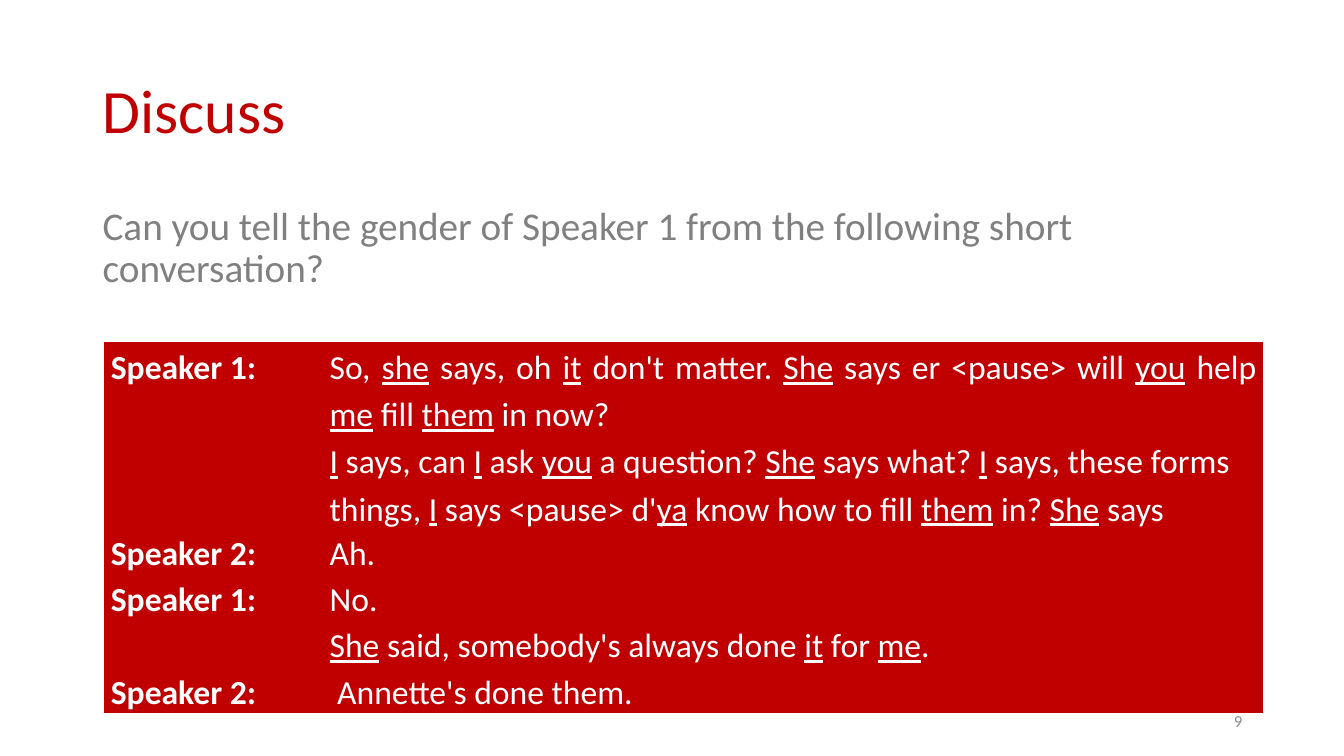
from dataclasses import dataclass

from pptx import Presentation
from pptx.dml.color import RGBColor
from pptx.enum.text import MSO_ANCHOR, PP_ALIGN
from pptx.oxml.ns import qn
from pptx.slide import Slide
from pptx.text.text import _Paragraph as Paragraph
from pptx.util import Inches, Pt

LEFT, RIGHT, JUSTIFY = PP_ALIGN.LEFT, PP_ALIGN.RIGHT, PP_ALIGN.JUSTIFY
TOP, MIDDLE = MSO_ANCHOR.TOP, MSO_ANCHOR.MIDDLE
RED, WHITE, GRAY, LIGHT_GRAY = "C00000", "FFFFFF", "808080", "8C8C8C"
FONT_NAME = "Calibri"
PLAIN_TABLE_STYLE = "{2D5ABB26-0587-4C30-8999-92F81FD0307C}"
UNDERLINE_MARK = "_"


@dataclass(frozen=True)
class Label:
    text: str
    left: float
    top: float
    width: float
    height: float
    size: int
    color: str
    anchor: MSO_ANCHOR = TOP
    alignment: PP_ALIGN = LEFT
    line_spacing: float = 0.9


@dataclass(frozen=True)
class Line:
    text: str
    alignment: PP_ALIGN = JUSTIFY


@dataclass(frozen=True)
class Turn:
    speaker: str
    lines: tuple[Line, ...]
    height: float = 0.32


LABELS = (
    Label("Discuss", 0.92, 0.4, 11.5, 1.45, 44, RED, anchor=MIDDLE),
    Label(
        "Can you tell the gender of Speaker 1 from the following short conversation?",
        0.92, 2, 11.5, 1.2, 28, GRAY,
    ),
    Label("9", 9.42, 6.95, 3, 0.4, 12, LIGHT_GRAY, MIDDLE, RIGHT, 1.0),
)

TURNS = (
    Turn(
        "Speaker 1:",
        (
            Line(
                "So, _she_ says, oh _it_ don't matter. _She_ says er <pause> "
                "will _you_ help _me_ fill _them_ in now?"
            ),
            Line(
                "_I_ says, can _I_ ask _you_ a question? _She_ says what? "
                "_I_ says, these forms things, _I_ says <pause> d'_ya_ know "
                "how to fill _them_ in? _She_ says",
                LEFT,
            ),
        ),
        1.35,
    ),
    Turn("Speaker 2:", (Line("Ah."),)),
    Turn("Speaker 1:", (Line("No."),)),
    Turn("", (Line("_She_ said, somebody's always done _it_ for _me_."),)),
    Turn("Speaker 2:", (Line(" Annette's done them."),)),
)

COLUMN_WIDTHS = (2.17, 9.33)
TABLE_LEFT, TABLE_TOP = 1.03, 3.39
CELL_FORMAT = {
    "margin_left": Inches(0.07),
    "margin_right": Inches(0.07),
    "margin_top": 0,
    "margin_bottom": 0,
}


def rgb(color: str) -> RGBColor:
    return RGBColor.from_string(color)


def set_attributes(target: object, values: dict) -> None:
    for name, value in values.items():
        setattr(target, name, value)


def write_paragraph(
    paragraph: Paragraph,
    text: str,
    size: int,
    color: str,
    alignment: PP_ALIGN,
    line_spacing: float,
    bold: bool = False,
) -> None:
    set_attributes(
        paragraph, {"alignment": alignment, "line_spacing": line_spacing}
    )
    font_format = {"name": FONT_NAME, "size": Pt(size), "bold": bold}
    set_attributes(paragraph.font, font_format)
    for index, part in enumerate(text.split(UNDERLINE_MARK)):
        if part:
            run = paragraph.add_run()
            run.text = part
            set_attributes(run.font, {**font_format, "underline": index % 2 == 1})
            run.font.color.rgb = rgb(color)


def add_label(slide: Slide, label: Label) -> None:
    box = slide.shapes.add_textbox(
        Inches(label.left), Inches(label.top), Inches(label.width), Inches(label.height)
    )
    set_attributes(
        box.text_frame, {"word_wrap": True, "vertical_anchor": label.anchor}
    )
    write_paragraph(
        box.text_frame.paragraphs[0],
        label.text,
        label.size,
        label.color,
        label.alignment,
        label.line_spacing,
    )


def add_conversation(slide: Slide, turns: tuple[Turn, ...]) -> None:
    frame = slide.shapes.add_table(
        len(turns),
        len(COLUMN_WIDTHS),
        Inches(TABLE_LEFT),
        Inches(TABLE_TOP),
        Inches(sum(COLUMN_WIDTHS)),
        Inches(sum(turn.height for turn in turns)),
    )
    table = frame.table
    set_attributes(table, {"first_row": False, "horz_banding": False})
    for style in frame.element.iter(qn("a:tableStyleId")):
        style.text = PLAIN_TABLE_STYLE
    for column, width in zip(table.columns, COLUMN_WIDTHS):
        column.width = Inches(width)
    for row, turn in zip(table.rows, turns):
        row.height = Inches(turn.height)
        contents = ((Line(turn.speaker),), turn.lines)
        for column_index, (cell, lines) in enumerate(zip(row.cells, contents)):
            set_attributes(cell, CELL_FORMAT)
            cell.fill.solid()
            cell.fill.fore_color.rgb = rgb(RED)
            for line_index, line in enumerate(lines):
                text_frame = cell.text_frame
                paragraph = (
                    text_frame.add_paragraph() if line_index else text_frame.paragraphs[0]
                )
                write_paragraph(
                    paragraph, line.text, 24, WHITE, line.alignment, 1.15,
                    bold=column_index == 0,
                )


def main() -> None:
    presentation = Presentation()
    presentation.slide_width = Inches(13.33)
    presentation.slide_height = Inches(7.5)
    slide = presentation.slides.add_slide(presentation.slide_layouts[6])
    for label in LABELS:
        add_label(slide, label)
    add_conversation(slide, TURNS)
    presentation.save("out.pptx")


if __name__ == "__main__":
    main()
